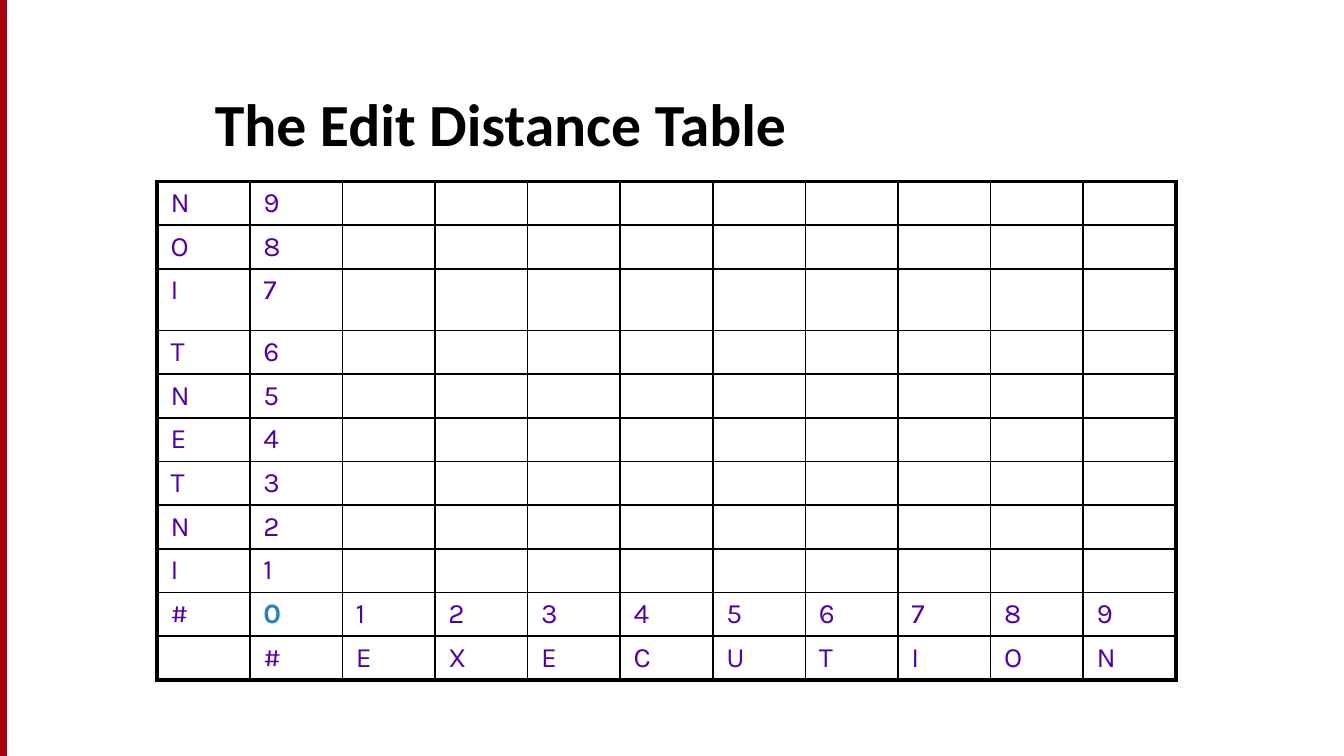
import lxml.etree
import pptx
import pptx.dml.color
import pptx.enum.shapes
import pptx.enum.text
import pptx.oxml.ns
import pptx.util

Inches = pptx.util.Inches
Pt = pptx.util.Pt
RGB = pptx.dml.color.RGBColor

BLACK = RGB(0x00, 0x00, 0x00)
PURPLE = RGB(0x54, 0x00, 0xA8)
BLUE = RGB(0x25, 0x84, 0xBB)
RED = RGB(0xA4, 0x05, 0x08)
EDGE = RGB(0xA4, 0x00, 0x1D)

WIDE = 10
HIGH = WIDE * 9 / 16
DOWN = "INTENTION"
ACROSS = "EXECUTION"
THIN, THICK = 1, 2.25


def add(parent, tag, **attrs):
    node = lxml.etree.SubElement(parent, pptx.oxml.ns.qn(tag))
    for key, value in attrs.items():
        node.set(key, str(value))
    return node


def write(frame, text, size=15, font="Karla", color=PURPLE, bold=False):
    para = frame.paragraphs[0]
    if not text:
        # An empty cell still needs its size, or the row grows
        end = add(para._p, "a:endParaRPr", sz=size * 100)
        add(end, "a:latin", typeface=font)
        return
    run = para.add_run()
    run.text = text
    run.font.size = Pt(size)
    run.font.name = font
    run.font.bold = bold
    run.font.color.rgb = color


class Deck:
    ink = BLACK
    head = {"size": 32, "font": "Calibri", "color": BLACK, "bold": True}
    start = {"color": BLUE, "bold": True}

    def __init__(self):
        self.show = pptx.Presentation()
        self.show.slide_width = Inches(WIDE)
        self.show.slide_height = Inches(HIGH)
        self.slide = self.show.slides.add_slide(self.show.slide_layouts[6])

    def bar(self, *box):
        kind = pptx.enum.shapes.MSO_SHAPE.RECTANGLE
        shape = self.slide.shapes.add_shape(kind, *map(Inches, box))
        shape.shadow.inherit = False
        shape.fill.solid()
        shape.fill.fore_color.rgb = RED
        shape.line.color.rgb = EDGE
        shape.line.width = Pt(0.75)

    def title(self, text, *box):
        frame = self.slide.shapes.add_textbox(*map(Inches, box)).text_frame
        frame.word_wrap = True
        frame.vertical_anchor = pptx.enum.text.MSO_ANCHOR.BOTTOM
        frame.margin_bottom = Inches(0.05)
        write(frame, text, **self.head)

    def border(self, cell, widths):
        props = cell._tc.get_or_add_tcPr()
        for side, width in widths.items():
            line = add(props, f"a:ln{side}", w=Pt(width))
            add(add(line, "a:solidFill"), "a:srgbClr", val=self.ink)

    def table(self, rows, left, top, wide, highs):
        count, last = len(rows[0]), len(rows) - 1
        frame = self.slide.shapes.add_table(
            len(rows), count, Inches(left), Inches(top),
            Inches(wide), Inches(sum(highs)))
        grid = frame.table
        grid.first_row = grid.horz_banding = False
        for col in grid.columns:
            col.width = Inches(wide / count)
        for r, row in enumerate(rows):
            grid.rows[r].height = Inches(highs[r])
            for c, text in enumerate(row):
                cell = grid.cell(r, c)
                cell.margin_left = cell.margin_right = Inches(0.1)
                cell.margin_top = cell.margin_bottom = Inches(0.04)
                outer = {"L": c == 0, "R": c == count - 1,
                         "T": r == 0, "B": r == last}
                self.border(cell, {side: THICK if out else THIN
                                   for side, out in outer.items()})
                cell.fill.background()
                look = self.start if text == "0" else {}
                write(cell.text_frame, text, **look)


def main():
    deck = Deck()

    # Red strip on the left edge
    deck.bar(0, 0, 0.05, HIGH)

    # Distance table: one word upwards, the other along the bottom
    size = len(ACROSS)
    rows = [[DOWN[n - 1], str(n)] + [""] * size
            for n in range(len(DOWN), 0, -1)]
    rows.append(["#"] + [str(n) for n in range(size + 1)])
    rows.append(["", "#", *ACROSS])

    # The third row is taller, the others share the rest
    tall, total = 0.46, 3.71
    highs = [(total - tall) / (len(rows) - 1)] * len(rows)
    highs[2] = tall
    deck.table(rows, 1.17, 1.35, 7.58, highs)

    # Title
    deck.title("The Edit Distance Table", 1.5, 0.42, 8.17, 0.81)

    deck.show.save("out.pptx")


if __name__ == "__main__":
    main()
